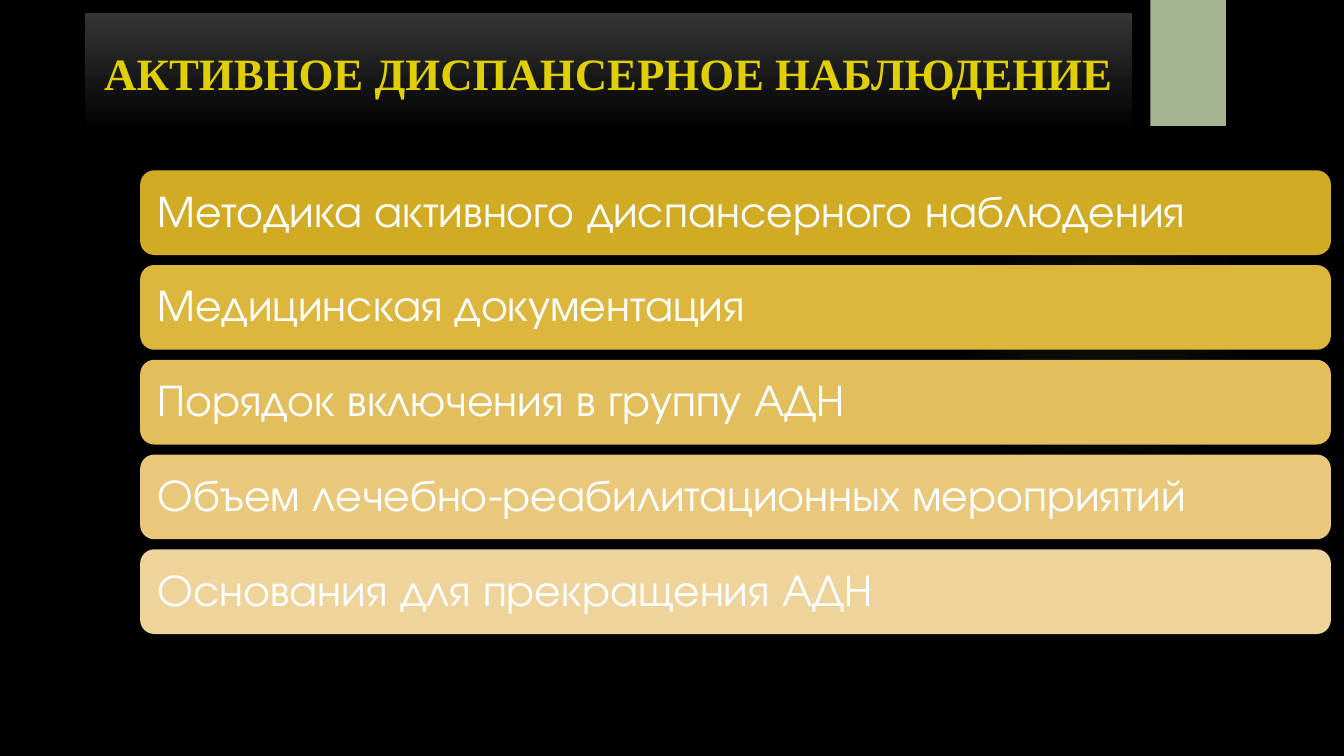
from dataclasses import dataclass

from lxml import etree
from pptx import Presentation
from pptx import util as u
from pptx.dml.color import RGBColor
from pptx.enum import shapes, text
from pptx.oxml import ns


@dataclass(frozen=True)
class Theme:
    background: str = "000000"
    glow: str = "9EB160"
    tab: str = "A5B592"
    title_top: str = "353535"
    title_text: str = "DFCF04"
    card_text: str = "FFFFFF"
    cards: tuple = ("D2AB25", "DDB63E", "E3BE5C", "E9C87B", "EED39A")
    title_font: str = "Times New Roman"
    card_font: str = "TeX Gyre Adventor"
    size: int = 32


theme = Theme()


def add_box(kind, left, top, width, height, color):
    box = page.shapes.add_shape(kind, u.Inches(left), u.Inches(top), u.Inches(width), u.Inches(height))
    box.shadow.inherit = False
    box.line.fill.background()
    box.fill.solid()
    box.fill.fore_color.rgb = RGBColor.from_string(color)
    return box


def add_label(box, wording, font, color, align, bold=False):
    frame = box.text_frame
    frame.word_wrap = True
    frame.vertical_anchor = text.MSO_ANCHOR.MIDDLE
    para = frame.paragraphs[0]
    para.alignment = align
    span = para.add_run()
    span.text = wording
    span.font.name = font
    span.font.size = u.Pt(theme.size)
    span.font.bold = bold
    span.font.color.rgb = RGBColor.from_string(color)
    return para


deck = Presentation()
deck.slide_width, deck.slide_height = u.Inches(13.33), u.Inches(7.5)
page = deck.slides.add_slide(deck.slide_layouts[6])
page.background.fill.solid()
page.background.fill.fore_color.rgb = RGBColor.from_string(theme.background)

# Faint round glow, fading out from its centre
glow = add_box(shapes.MSO_SHAPE.OVAL, 9.41, 1.83, 3.08, 3.08, theme.glow)
stops = "".join(
    f'<a:gs pos="{position * 1000}"><a:srgbClr val="{theme.glow}">'
    f'<a:alpha val="{alpha * 1000}"/></a:srgbClr></a:gs>'
    for position, alpha in ((0, 7), (36, 6), (69, 0))
)
gradient = etree.fromstring(
    f'<a:gradFill {ns.nsdecls("a")}><a:gsLst>{stops}</a:gsLst><a:path path="circle">'
    '<a:fillToRect l="50000" t="50000" r="50000" b="50000"/></a:path></a:gradFill>'
)
solid = glow.element.spPr.find(ns.qn("a:solidFill"))
solid.getparent().replace(solid, gradient)

# Green tab at the top edge
add_box(shapes.MSO_SHAPE.RECTANGLE, 11.41, 0, 0.75, 1.25, theme.tab)

# Title band
title = add_box(shapes.MSO_SHAPE.RECTANGLE, 0.84, 0.13, 10.39, 1.18, theme.title_top)
title.fill.gradient()
title.fill.gradient_angle = 270
for stop, color in zip(title.fill.gradient_stops, (theme.title_top, theme.background)):
    stop.color.rgb = RGBColor.from_string(color)
add_label(title, "АКТИВНОЕ ДИСПАНСЕРНОЕ НАБЛЮДЕНИЕ", theme.title_font,
          theme.title_text, text.PP_ALIGN.CENTER, bold=True)

# Stack of topic cards
topics = (
    "Методика активного диспансерного наблюдения",
    "Медицинская документация",
    "Порядок включения в группу АДН",
    "Объем лечебно-реабилитационных мероприятий",
    "Основания для прекращения АДН",
)
for row, (topic, color) in enumerate(zip(topics, theme.cards)):
    card = add_box(shapes.MSO_SHAPE.ROUNDED_RECTANGLE, 1.39, 1.69 + row * 0.94, 11.81, 0.84, color)
    # A rounded rectangle already insets its text by about 0.04 inch
    card.text_frame.margin_left = card.text_frame.margin_right = u.Inches(0.13)
    para = add_label(card, topic, theme.card_font, theme.card_text, text.PP_ALIGN.LEFT)
    para.line_spacing = 0.9

deck.save("out.pptx")
